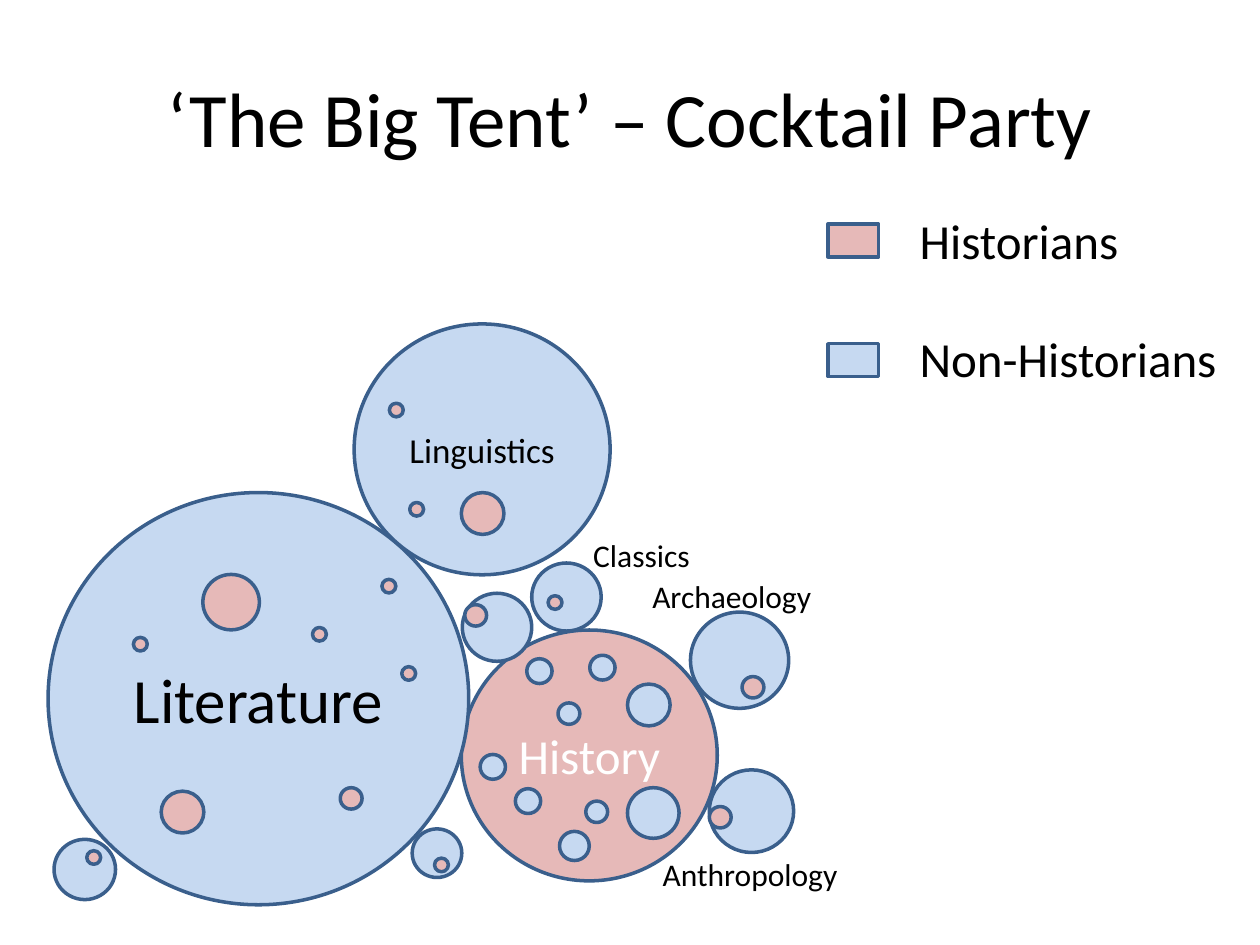
from pptx import Presentation
from pptx.dml.color import RGBColor as Rgb
from pptx.enum.shapes import MSO_SHAPE as Kind
from pptx.enum.text import MSO_ANCHOR as Anchor, PP_ALIGN as Align
from pptx.util import Cm, Pt

HUES = {"hist": "E6B9B8", "other": "C6D9F1", "edge": "3A5F8C",
        "ink": "000000", "pale": "FFFFFF"}
FLAT = 0.98  # height of a circle relative to its width
TINY, SMALL, MID, BIG = 0.28, 0.44, 0.51, 0.86  # dot widths in cm


def write(frame, *lines, size=18, ink="ink", align=Align.LEFT,
          anchor=Anchor.TOP, wrap=False, gap=0):
    """Put one paragraph per line in the frame, with a gap between them."""
    frame.word_wrap = wrap
    frame.vertical_anchor = anchor
    for i, line in enumerate(lines):
        para = frame.add_paragraph() if i else frame.paragraphs[0]
        para.alignment = align
        para.space_before = Pt(gap if i else 0)
        run = para.add_run()
        run.text = line
        run.font.name = "Calibri"
        run.font.size = Pt(size)
        run.font.color.rgb = Rgb.from_string(HUES[ink])


class Board:
    """Holds the slide and the common look of its shapes."""
    edge, width = "edge", Pt(2)

    def __init__(self, slide):
        self.slide = slide

    def text(self, box, *lines, **style):
        area = self.slide.shapes.add_textbox(*map(Cm, box))
        write(area.text_frame, *lines, **style)

    def shape(self, kind, box, hue, home=None):
        item = (home or self.slide).shapes.add_shape(kind, *map(Cm, box))
        item.shadow.inherit = False
        item.fill.solid()
        item.fill.fore_color.rgb = Rgb.from_string(HUES[hue])
        item.line.color.rgb = Rgb.from_string(HUES[self.edge])
        item.line.width = self.width
        return item

    def disc(self, spot, hue, home):
        x, y, wide = spot
        return self.shape(Kind.OVAL, (x, y, wide, wide * FLAT), hue, home)

    def field(self, spot, dots, name="", hue="other", **style):
        """Group a large circle with dots of the opposite hue inside it."""
        group = self.slide.shapes.add_group_shape()
        main = self.disc(spot, hue, group)
        if name:
            write(main.text_frame, name, align=Align.CENTER,
                  anchor=Anchor.MIDDLE, wrap=True, **style)
        for dot in dots:
            self.disc(dot, "other" if hue == "hist" else "hist", group)


def main():
    deck = Presentation()
    deck.slide_width, deck.slide_height = Cm(25.4), Cm(19.05)
    board = Board(deck.slides.add_slide(deck.slide_layouts[6]))

    # Title
    board.text((1.27, 0.76, 22.86, 3.18), "‘The Big Tent’ – Cocktail Party",
               size=44, align=Align.CENTER, anchor=Anchor.MIDDLE, wrap=True)

    # Names beside the small circles
    for x, y, wide, name in [(12.9, 11.51, 3.76, "Archaeology"),
                             (13.11, 17.12, 4.06, "Anthropology"),
                             (11.71, 10.69, 2.49, "Classics")]:
        board.text((x, y, wide, 1.02), name)

    # History, with outsiders in it
    board.field((9.3, 12.7, 5.16), [
        (11.28, 16.76, 0.6), (10.62, 13.28, MID), (12.65, 13.79, BIG),
        (12.65, 15.88, 1.04), (9.68, 15.21, MID), (11.89, 13.21, MID),
        (11.81, 16.15, SMALL), (10.39, 15.9, MID), (11.25, 14.17, SMALL),
    ], "History", "hist", size=28, ink="pale")

    # Legend
    board.text((18.29, 4.11, 6.55, 3.84), "Historians", "Non-Historians",
               size=28, gap=34)
    for i, hue in enumerate(("hist", "other")):
        board.shape(Kind.RECTANGLE, (16.69, 4.52 + 2.41 * i, 1.02, 0.66), hue)

    # Small circles, each with one dot of historians
    for spot, dot in [
        ((9.32, 11.96, 1.4), (9.37, 12.19, SMALL)),
        ((13.92, 12.34, 1.98), (14.96, 13.64, SMALL)),
        ((14.3, 15.52, 1.7), (14.3, 16.26, SMALL)),
        ((10.72, 11.35, 1.4), (11.05, 12.01, TINY)),
        ((8.31, 16.71, 1), (8.76, 17.3, TINY)),
        ((1.09, 16.92, 1.24), (1.75, 17.15, TINY)),
    ]:
        board.field(spot, [dot])

    # Literature and linguistics
    board.field((0.97, 9.93, 8.48), [
        (4.09, 11.58, 1.14), (3.25, 15.95, BIG), (6.86, 15.88, SMALL),
        (7.7, 11.68, TINY), (8.1, 13.44, TINY), (6.3, 12.65, TINY),
        (2.69, 12.85, TINY),
    ], "Literature", size=36)
    board.field((7.14, 6.53, 5.16), [
        (9.3, 9.93, BIG), (7.85, 8.13, TINY), (8.26, 10.13, TINY),
    ], "Linguistics", size=20)

    deck.save("out.pptx")


if __name__ == "__main__":
    main()
